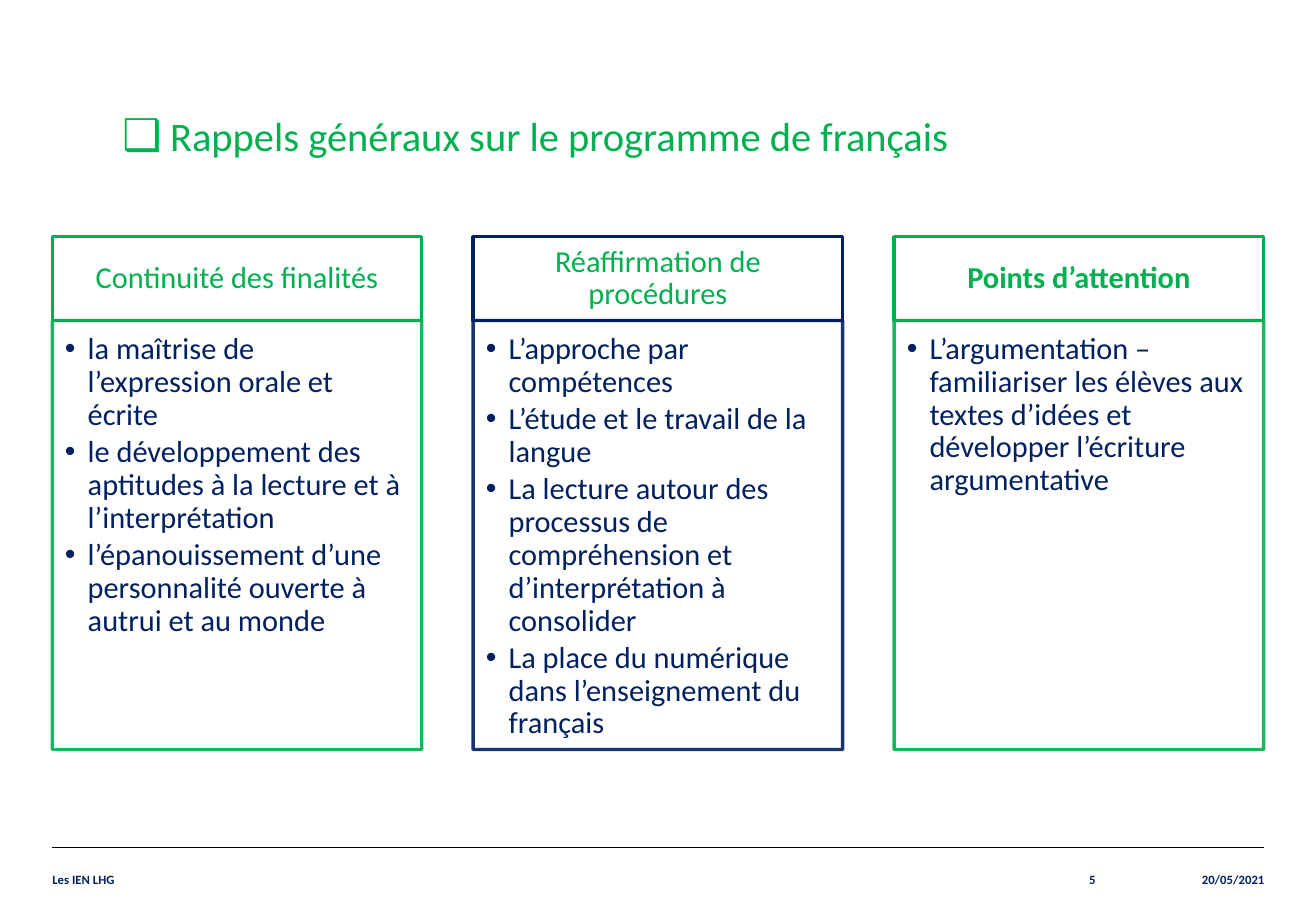
from dataclasses import dataclass

import lxml.etree
import pptx
import pptx.dml.color
import pptx.enum.shapes
import pptx.enum.text
import pptx.oxml.ns
import pptx.util

Pt = pptx.util.Pt
Align = pptx.enum.text.PP_ALIGN
Anchor = pptx.enum.text.MSO_ANCHOR


@dataclass(frozen=True)
class Theme:
    font: str = "Calibri"
    green: str = "00B050"
    navy: str = "002060"
    black: str = "000000"
    title_size: float = 24
    body_size: float = 18
    footer_size: float = 7.5


@dataclass(frozen=True)
class Box:
    left: float
    top: float
    width: float
    height: float


@dataclass(frozen=True)
class Bullet:
    character: str
    indent: float
    color: str
    percent: int = 100


@dataclass(frozen=True)
class Column:
    heading: str
    items: list[str]
    outline: str
    bold_heading: bool = False


@dataclass(frozen=True)
class FooterItem:
    text: str
    left: float
    width: float
    align: Align


THEME = Theme()
MARGIN = 31
COLUMN_WIDTH = 219
COLUMN_STEP = 249.5
HEADING_TOP, HEADING_HEIGHT = 140.3, 49.7
BODY_TOP, BODY_HEIGHT = 190, 254.3
FOOTER_TOP, FOOTER_HEIGHT = 502.5, 37.5
ITEM_BULLET = Bullet("•", 13.5, THEME.navy)
TITLE_BULLET = Bullet("❑", 28.2, THEME.green, 108)

COLUMNS = [
    Column("Continuité des finalités", [
        "la maîtrise de l’expression orale et écrite",
        "le développement des aptitudes à la lecture et à l’interprétation",
        "l’épanouissement d’une personnalité ouverte à autrui et au monde",
    ], THEME.green),
    Column("Réaffirmation de procédures", [
        "L’approche par compétences",
        "L’étude et le travail de la langue",
        "La lecture autour des processus de compréhension et d’interprétation à consolider",
        "La place du numérique dans l’enseignement du français",
    ], THEME.navy),
    Column("Points d’attention", [
        "L’argumentation – familiariser les élèves aux textes d’idées et "
        "développer l’écriture argumentative",
    ], THEME.green, bold_heading=True),
]

FOOTER = [
    FooterItem("Les IEN LHG", MARGIN, 503.3, Align.LEFT),
    FooterItem("5", 534.2, 115.2, Align.RIGHT),
    FooterItem("20/05/2021", 649.4, 100.1, Align.RIGHT),
]


def rgb(color: str) -> pptx.dml.color.RGBColor:
    return pptx.dml.color.RGBColor.from_string(color)


def place(box: Box) -> list[int]:
    return [Pt(value) for value in (box.left, box.top, box.width, box.height)]


def add_child(parent, tag: str, **attributes: str):
    return lxml.etree.SubElement(parent, pptx.oxml.ns.qn(tag), **attributes)


def add_bullet(paragraph, bullet: Bullet) -> None:
    properties = paragraph._p.get_or_add_pPr()
    properties.set("marL", str(Pt(bullet.indent)))
    properties.set("indent", str(-Pt(bullet.indent)))
    add_child(add_child(properties, "a:buClr"), "a:srgbClr", val=bullet.color)
    add_child(properties, "a:buSzPct", val=str(bullet.percent * 1000))
    add_child(properties, "a:buFont", typeface="Arial")
    add_child(properties, "a:buChar", char=bullet.character)


def write_text(shape, paragraphs: list[str], *, size: float, color: str,
               bold: bool = False, align: Align = Align.LEFT,
               anchor: Anchor = Anchor.TOP, line_spacing: float = 1.0,
               space_after: float = 0, bullet: Bullet | None = None,
               insets: tuple[float, float, float, float] = (0, 0, 0, 0)) -> None:
    frame = shape.text_frame
    frame.word_wrap = True
    frame.vertical_anchor = anchor
    (frame.margin_left, frame.margin_top,
     frame.margin_right, frame.margin_bottom) = map(Pt, insets)
    for index, text in enumerate(paragraphs):
        paragraph = frame.add_paragraph() if index else frame.paragraphs[0]
        paragraph.alignment = align
        paragraph.line_spacing = line_spacing
        paragraph.space_after = Pt(space_after)
        if bullet:
            add_bullet(paragraph, bullet)
        run = paragraph.add_run()
        run.text = text
        run.font.name = THEME.font
        run.font.size = Pt(size)
        run.font.bold = bold
        run.font.color.rgb = rgb(color)


def add_panel(slide, box: Box, outline: str, opacity: int = 100):
    shape = slide.shapes.add_shape(
        pptx.enum.shapes.MSO_SHAPE.RECTANGLE, *place(box))
    shape.shadow.inherit = False
    shape.fill.background()
    shape.line.color.rgb = rgb(outline)
    shape.line.width = Pt(2)
    if opacity < 100:
        color = shape.line.fill._xPr.find(".//" + pptx.oxml.ns.qn("a:srgbClr"))
        add_child(color, "a:alpha", val=str(opacity * 1000))
    return shape


def add_column(slide, column: Column, left: float) -> None:
    heading = add_panel(
        slide, Box(left, HEADING_TOP, COLUMN_WIDTH, HEADING_HEIGHT), column.outline)
    write_text(heading, [column.heading], size=THEME.body_size, color=THEME.green,
               bold=column.bold_heading, align=Align.CENTER, anchor=Anchor.MIDDLE,
               line_spacing=0.9, insets=(10, 5.8, 10, 5.8))
    body = add_panel(
        slide, Box(left, BODY_TOP, COLUMN_WIDTH, BODY_HEIGHT), column.outline, 90)
    write_text(body, column.items, size=THEME.body_size, color=THEME.navy,
               line_spacing=0.9, space_after=2.7, bullet=ITEM_BULLET,
               insets=(7.5, 7.5, 10, 11.5))


def add_footer(slide) -> None:
    rule = slide.shapes.add_connector(
        pptx.enum.shapes.MSO_CONNECTOR.STRAIGHT,
        Pt(MARGIN), Pt(FOOTER_TOP), Pt(749.5), Pt(FOOTER_TOP))
    rule.line.color.rgb = rgb(THEME.black)
    rule.line.width = Pt(0.8)
    add_child(rule._element.spPr, "a:effectLst")
    for item in FOOTER:
        box = Box(item.left, FOOTER_TOP, item.width, FOOTER_HEIGHT)
        write_text(slide.shapes.add_textbox(*place(box)), [item.text],
                   size=THEME.footer_size, color=THEME.navy, bold=True,
                   align=item.align, anchor=Anchor.MIDDLE)


def main() -> None:
    presentation = pptx.Presentation()
    presentation.slide_width, presentation.slide_height = Pt(780), Pt(540)
    slide = presentation.slides.add_slide(presentation.slide_layouts[6])

    # Title
    title = slide.shapes.add_textbox(*place(Box(65.5, 62.3, 649.5, 37)))
    write_text(title, ["Rappels généraux sur le programme de français"],
               size=THEME.title_size, color=THEME.green, bullet=TITLE_BULLET,
               insets=(7.2, 3.6, 7.2, 3.6))

    # Three columns of headed lists
    for index, column in enumerate(COLUMNS):
        add_column(slide, column, MARGIN + index * COLUMN_STEP)

    # Footer rule and labels
    add_footer(slide)
    presentation.save("out.pptx")


if __name__ == "__main__":
    main()
